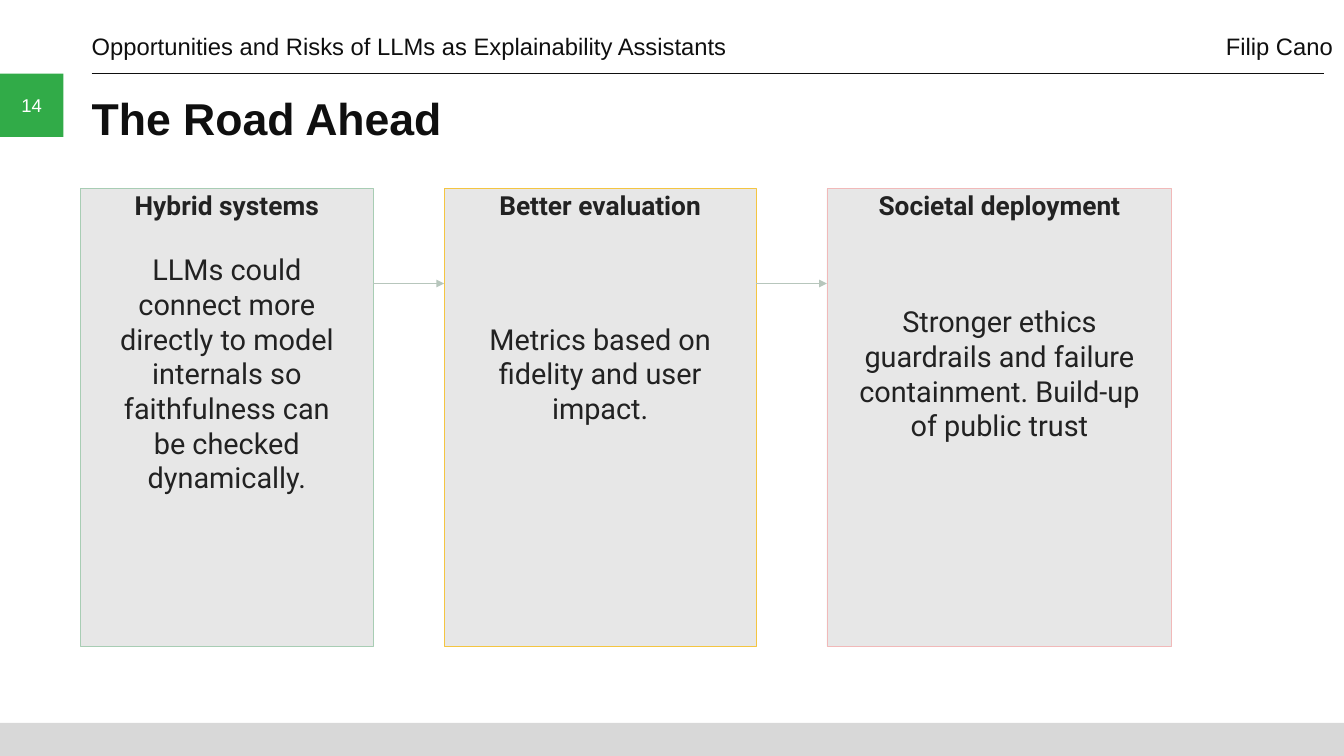
from lxml import etree
from pptx import Presentation
from pptx.dml.color import RGBColor
from pptx.enum.shapes import MSO_CONNECTOR as Connector, MSO_SHAPE as Shape
from pptx.enum.text import MSO_ANCHOR as Anchor, PP_ALIGN as Align
from pptx.oxml.ns import qn
from pptx.util import Inches, Pt

WIDTH, HEIGHT = 14.22, 8
MARGIN = 0.97
INK, BODY_INK = "0F0F0F", "222222"
CARD_TOP, CARD_HEIGHT, CARD_GAP = 2, 4.84, 0.75
CARDS = [
    # heading, body, outline, width, body width
    ("Hybrid systems",
     "LLMs could connect more directly to model internals so "
     "faithfulness can be checked dynamically.", "A8CDB4", 3.1, 2.55),
    ("Better evaluation",
     "Metrics based on fidelity and user impact.", "F4C542", 3.3, 2.7),
    ("Societal deployment",
     "Stronger ethics guardrails and failure containment. "
     "Build-up of public trust", "F1B9B9", 3.65, 3),
]


def color(value):
    return RGBColor.from_string(value)


def write(box, text, size, ink, font="Arial", bold=False,
          align=Align.LEFT, anchor=Anchor.TOP):
    frame = box.text_frame
    settings = {"word_wrap": True, "vertical_anchor": anchor,
                "margin_left": 0, "margin_right": 0,
                "margin_top": 0, "margin_bottom": 0}
    for name, value in settings.items():
        setattr(frame, name, value)
    para = frame.paragraphs[0]
    para.alignment = align
    span = para.add_run()
    span.text = text
    for name, value in {"name": font, "size": Pt(size), "bold": bold}.items():
        setattr(span.font, name, value)
    span.font.color.rgb = color(ink)
    return para


def add_text(page, left, top, width, height, *args, **style):
    box = page.shapes.add_textbox(
        Inches(left), Inches(top), Inches(width), Inches(height))
    return write(box, *args, **style)


def add_block(page, left, top, width, height, fill, outline=None):
    block = page.shapes.add_shape(
        Shape.RECTANGLE, Inches(left), Inches(top), Inches(width), Inches(height))
    block.shadow.inherit = False
    block.fill.solid()
    block.fill.fore_color.rgb = color(fill)
    if outline:
        block.line.color.rgb = color(outline)
        block.line.width = Pt(0.75)
    else:
        block.line.fill.background()
    return block


def add_rule(page, left, right, y, ink, weight, arrow=False):
    """Draw a horizontal line, with an arrowhead at its right end if asked."""
    rule = page.shapes.add_connector(
        Connector.STRAIGHT, Inches(left), Inches(y), Inches(right), Inches(y))
    rule.line.color.rgb = color(ink)
    rule.line.width = Pt(weight)
    if arrow:
        etree.SubElement(rule.line._get_or_add_ln(), qn("a:tailEnd"), type="triangle")
    etree.SubElement(rule._element.spPr, qn("a:effectLst"))


def add_header(page, left, top, width, talk, speaker):
    para = add_text(page, left, top, width, 0.28, f"{talk}\t{speaker}", 18.1, INK,
                    anchor=Anchor.BOTTOM)
    tabs = etree.SubElement(para._p.get_or_add_pPr(), qn("a:tabLst"))
    etree.SubElement(tabs, qn("a:tab"), pos=str(Inches(12)), algn="l")
    add_rule(page, left, left + 13.04, top + 0.42, INK, 0.75)


def add_page_number(page, left, top, side, number):
    block = add_block(page, left, top, side, side, "31AB48")
    write(block, number, 14.1, "FFFFFF", align=Align.CENTER, anchor=Anchor.MIDDLE)


def add_card(page, left, top, width, height, heading, body, outline, body_width):
    card = add_block(page, left, top, width, height, "E7E7E7", outline)
    write(card, heading, 20, BODY_INK, font="Roboto", bold=True, align=Align.CENTER)
    add_text(page, left + (width - body_width) / 2, top + 0.8, body_width, 2.3,
             body, 22, BODY_INK, font="Roboto",
             align=Align.CENTER, anchor=Anchor.MIDDLE)


def add_roadmap(page, left, top, height):
    """Place the cards in a row, with an arrow in each gap."""
    for index, (heading, body, outline, width, body_width) in enumerate(CARDS):
        if index:
            add_rule(page, left - CARD_GAP, left, top + 1, "B7C6BC", 1, arrow=True)
        add_card(page, left, top, width, height, heading, body, outline, body_width)
        left += width + CARD_GAP


def main():
    deck = Presentation()
    deck.slide_width, deck.slide_height = Inches(WIDTH), Inches(HEIGHT)
    page = deck.slides.add_slide(deck.slide_layouts[6])
    add_block(page, 0, 7.65, WIDTH, 0.35, "D8D8D8")
    add_page_number(page, 0, 0.78, 0.67, "14")
    add_header(page, MARGIN, 0.36, 13.14,
               "Opportunities and Risks of LLMs as Explainability Assistants",
               "Filip Cano")
    add_text(page, MARGIN, 0.96, 13.06, 0.76, "The Road Ahead", 34, INK, bold=True)
    add_roadmap(page, 0.85, CARD_TOP, CARD_HEIGHT)
    deck.save("out.pptx")


if __name__ == "__main__":
    main()
